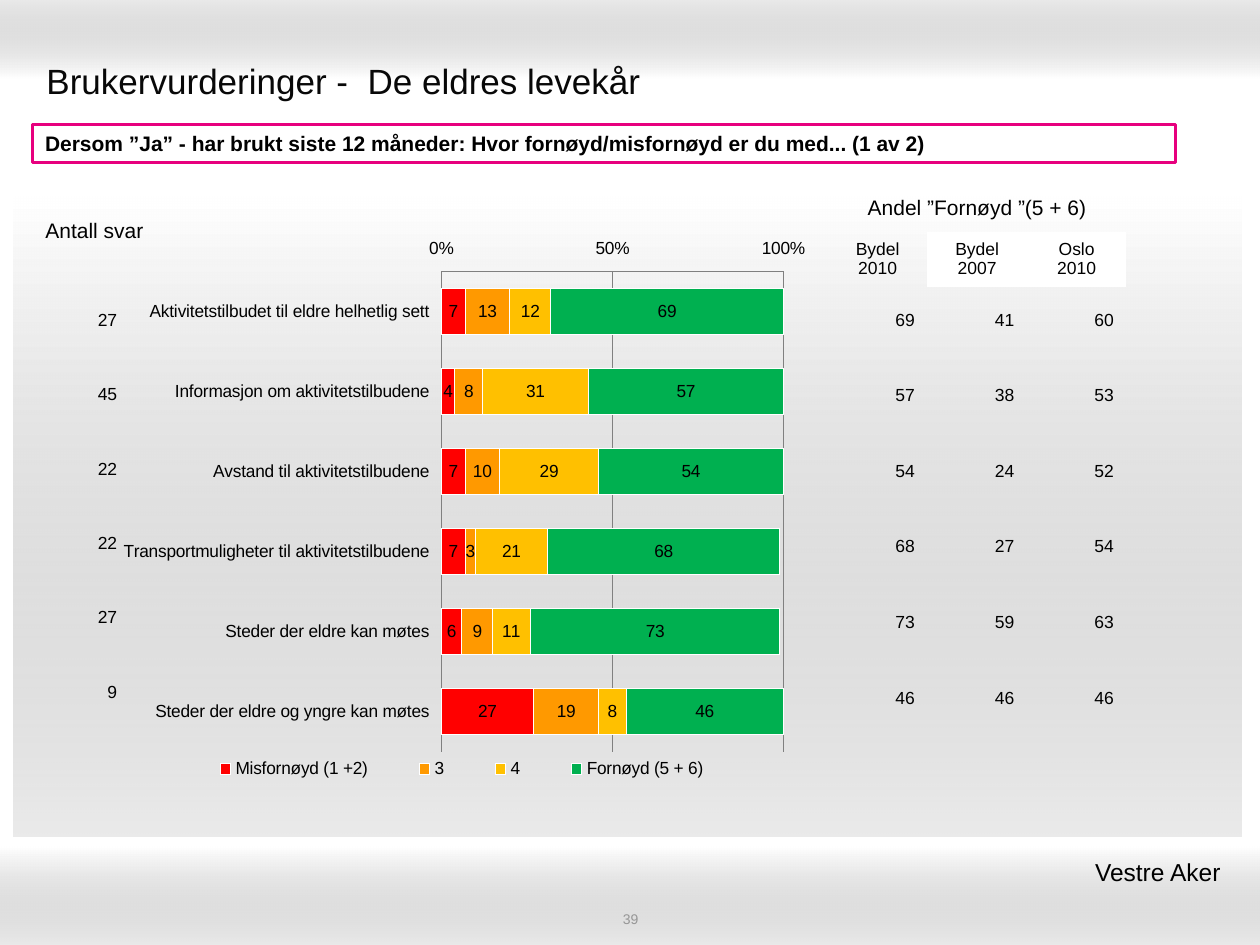
"""Build the slide on user ratings of services for the elderly."""
from dataclasses import dataclass

import lxml.etree
import pptx
import pptx.chart.data
import pptx.dml.color
import pptx.enum.chart
import pptx.enum.shapes
import pptx.enum.text
import pptx.oxml.ns
import pptx.util

Inches = pptx.util.Inches
Pt = pptx.util.Pt
RGB = pptx.dml.color.RGBColor.from_string
qn = pptx.oxml.ns.qn
ALIGN = pptx.enum.text.PP_ALIGN
ANCHOR = pptx.enum.text.MSO_ANCHOR
RECTANGLE = pptx.enum.shapes.MSO_SHAPE.RECTANGLE


@dataclass(frozen=True)
class Theme:
    font: str = "Arial"
    ink: str = "000000"
    title_ink: str = "080808"
    muted: str = "969696"
    white: str = "FFFFFF"
    shade: str = "999999"
    accent: str = "E7007E"
    grid: str = "808080"
    title_size: int = 20
    place_size: int = 14
    lead_size: int = 12
    body_size: int = 10
    number_size: int = 8


theme = Theme()


def write(frame, text, size, color=theme.ink, align=ALIGN.LEFT, bold=False):
    frame.word_wrap = True
    for index, line in enumerate(text.split("\n")):
        para = frame.add_paragraph() if index else frame.paragraphs[0]
        para.alignment = align
        span = para.add_run()
        span.text = line
        span.font.name = theme.font
        span.font.size = Pt(size)
        span.font.bold = bold
        span.font.color.rgb = RGB(color)


def add_grid(page, left, top, width, heights, rows, size, align):
    columns = len(rows[0])
    table = page.shapes.add_table(
        len(rows), columns, Inches(left), Inches(top), Inches(width * columns), Inches(sum(heights))
    ).table
    table.first_row = table.horz_banding = False
    table._tbl.tblPr.find(qn("a:tableStyleId")).text = "{2D5ABB26-0587-4C30-8999-92F81FD0307C}"
    for column in table.columns:
        column.width = Inches(width)
    for row, height, texts in zip(table.rows, heights, rows):
        row.height = Inches(height)
        for cell, text in zip(row.cells, texts):
            cell.fill.background()
            cell.vertical_anchor = ANCHOR.MIDDLE
            if text:
                write(cell.text_frame, text, size, align=align)
    return table


deck = pptx.Presentation()
deck.slide_width, deck.slide_height = Inches(10), Inches(7.5)
page = deck.slides.add_slide(deck.slide_layouts[6])

panels = [(0, 0, 10, 0.62, 90), (0, 6.72, 10, 0.78, 270), (0.11, 1.56, 9.74, 5.08, 270)]
for left, top, width, height, angle in panels:
    panel = page.shapes.add_shape(RECTANGLE, Inches(left), Inches(top), Inches(width), Inches(height))
    panel.shadow.inherit = False
    panel.line.fill.background()
    panel.fill.gradient()
    panel.fill.gradient_angle = angle
    for stop, color, position in zip(panel.fill.gradient_stops, (theme.white, theme.shade), (0, 1)):
        stop.color.rgb = RGB(color)
        stop.position = position
    shade = panel._element.spPr.findall(".//" + qn("a:srgbClr"))[-1]
    lxml.etree.SubElement(shade, qn("a:alpha"), val="20000")

labels = [
    (0.27, 0.36, 9.45, 0.55, "Brukervurderinger -  De eldres levekår",
     theme.title_size, theme.title_ink, ALIGN.LEFT, ANCHOR.MIDDLE),
    (3.42, 7.22, 3.17, 0.14, "39", theme.number_size, theme.muted, ALIGN.CENTER, ANCHOR.MIDDLE),
    (6.1, 6.75, 3.74, 0.34, "Vestre Aker ", theme.place_size, theme.ink, ALIGN.RIGHT, ANCHOR.TOP),
]
for left, top, width, height, text, size, color, align, anchor in labels:
    box = page.shapes.add_textbox(Inches(left), Inches(top), Inches(width), Inches(height))
    box.text_frame.vertical_anchor = anchor
    write(box.text_frame, text, size, color, align)

question = page.shapes.add_shape(RECTANGLE, Inches(0.26), Inches(0.99), Inches(9.07), Inches(0.3))
question.shadow.inherit = False
question.fill.solid()
question.fill.fore_color.rgb = RGB(theme.white)
question.line.color.rgb = RGB(theme.accent)
question.line.width = Pt(2)
question.text_frame.vertical_anchor = ANCHOR.TOP
write(
    question.text_frame,
    "Dersom ”Ja” - har brukt siste 12 måneder: Hvor fornøyd/misfornøyd er du med... (1 av 2)",
    theme.lead_size, bold=True,
)

ratings = [
    ("Misfornøyd (1 +2)", "FF0000", (7, 4, 7, 7, 6, 27)),
    ("3", "FF9900", (13, 8, 10, 3, 9, 19)),
    ("4", "FFC000", (12, 31, 29, 21, 11, 8)),
    ("Fornøyd (5 + 6)", "00B050", (69, 57, 54, 68, 73, 46)),
]
data = pptx.chart.data.CategoryChartData(number_format="0")
data.categories = [
    "Aktivitetstilbudet til eldre helhetlig sett",
    "Informasjon om aktivitetstilbudene",
    "Avstand til aktivitetstilbudene",
    "Transportmuligheter til aktivitetstilbudene",
    "Steder der eldre kan møtes",
    "Steder der eldre og yngre kan møtes",
]
for name, color, values in ratings:
    data.add_series(name, values)
chart = page.shapes.add_chart(
    pptx.enum.chart.XL_CHART_TYPE.BAR_STACKED,
    Inches(0.98), Inches(1.79), Inches(5.51), Inches(4.54), data,
).chart
chart.has_title = False
chart.font.name = theme.font
chart.font.size = Pt(theme.body_size)
chart.font.color.rgb = RGB(theme.ink)
plot = chart.plots[0]
plot.vary_by_categories = False
plot.gap_width, plot.overlap = 75, 100
for series, (name, color, values) in zip(plot.series, ratings):
    series.format.fill.solid()
    series.format.fill.fore_color.rgb = RGB(color)
    series.format.line.color.rgb = RGB(theme.white)
    series.data_labels.show_value = True
    series.data_labels.number_format = "0"
    series.data_labels.number_format_is_linked = False

tick = pptx.enum.chart.XL_TICK_MARK
for axis in (chart.category_axis, chart.value_axis):
    axis.tick_label_position = pptx.enum.chart.XL_TICK_LABEL_POSITION.LOW
    axis.minor_tick_mark = tick.NONE
    axis.format.line.color.rgb = RGB(theme.grid)
chart.category_axis.reverse_order = True
chart.category_axis.major_tick_mark = tick.NONE
scale = chart.value_axis
scale.major_tick_mark = tick.INSIDE
scale.minimum_scale, scale.maximum_scale, scale.major_unit = 0, 100, 50
scale.has_major_gridlines = True
scale.major_gridlines.format.line.color.rgb = RGB(theme.grid)
scale.tick_labels.number_format = "General\\%"
scale.tick_labels.number_format_is_linked = False

chart.has_legend = True
chart.legend.position = pptx.enum.chart.XL_LEGEND_POSITION.BOTTOM
chart.legend.include_in_layout = False
layouts = [
    (chart._chartSpace.chart.plotArea, 0, True, (0.45, 0.08, 0.5, 0.84)),
    (chart.legend._element, 1, False, (0.06, 0.92, 0.84, 0.06)),
]
for parent, index, is_plot, bounds in layouts:
    for old in parent.findall(qn("c:layout")):
        parent.remove(old)
    layout = parent.makeelement(qn("c:layout"))
    parent.insert(index, layout)
    manual = lxml.etree.SubElement(layout, qn("c:manualLayout"))
    if is_plot:
        lxml.etree.SubElement(manual, qn("c:layoutTarget"), val="inner")
    for key in ("xMode", "yMode"):
        lxml.etree.SubElement(manual, qn("c:" + key), val="edge")
    for key, value in zip("xywh", bounds):
        lxml.etree.SubElement(manual, qn("c:" + key), val=str(value))

shares = zip(ratings[-1][2], (41, 38, 24, 27, 59, 46), (60, 53, 52, 54, 63, 46))
share_rows = [[str(share) for share in row] for row in shares]
add_grid(page, 6.57, 2.24, 0.79, [0.6] * 6, share_rows, theme.body_size, ALIGN.RIGHT)

heading_rows = [["", "", ""], ["Bydel\n2010", "Bydel\n2007", "Oslo\n2010"]]
heading = add_grid(page, 6.57, 1.47, 0.79, [0.37, 0.39], heading_rows, theme.body_size, ALIGN.CENTER)
heading.cell(0, 0).merge(heading.cell(0, 2))
write(heading.cell(0, 0).text_frame, "Andel ”Fornøyd ”(5 + 6)", theme.lead_size, align=ALIGN.CENTER)
for column in (1, 2):
    heading.cell(1, column).fill.solid()
    heading.cell(1, column).fill.fore_color.rgb = RGB(theme.white)

answer_rows = [[count] for count in ("27", "45", "22", "22", "27", "9")]
add_grid(page, 0.51, 2.25, 0.52, [0.59] * 6, answer_rows, theme.body_size, ALIGN.RIGHT)
add_grid(page, 0.04, 1.54, 1.42, [0.59], [["Antall svar"]], theme.lead_size, ALIGN.CENTER)

deck.save("out.pptx")
